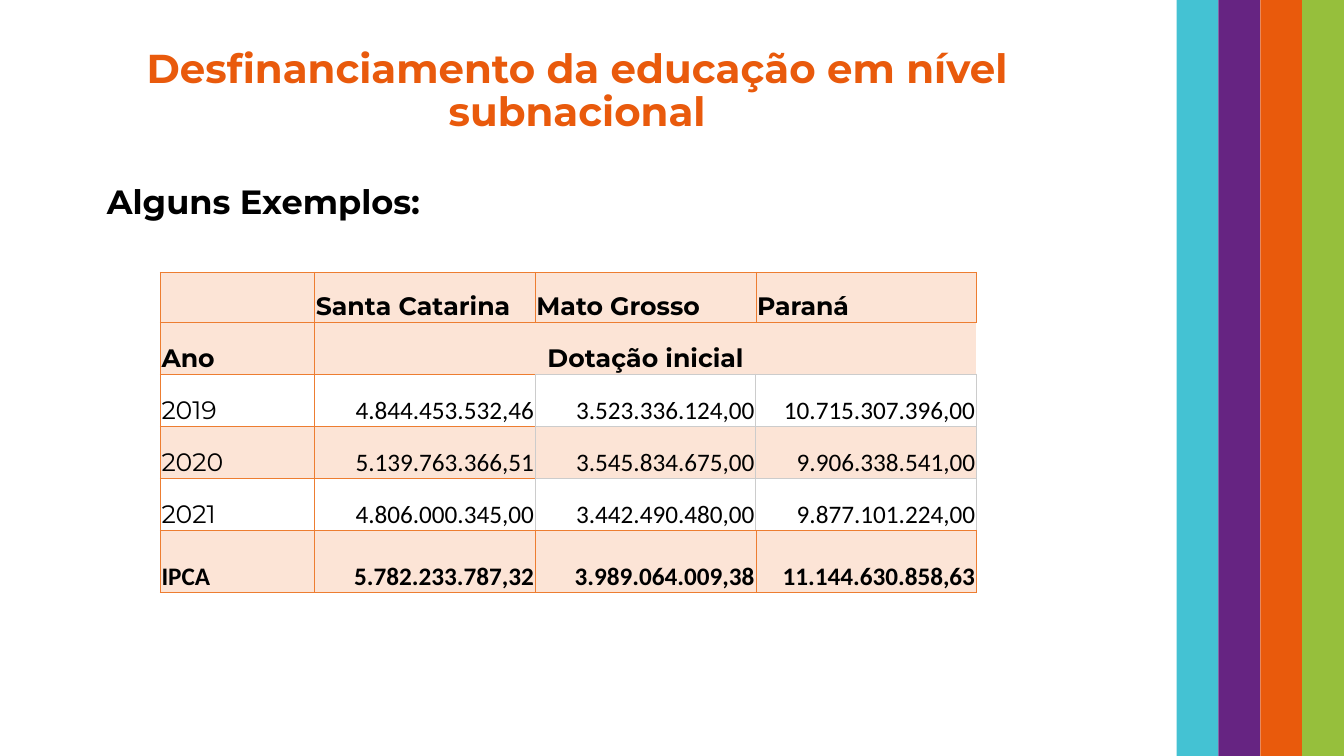
"""Build the slide on state education budgets, with a table of initial allocations."""
from dataclasses import dataclass

from lxml import etree
from pptx import Presentation
from pptx.dml.color import RGBColor
from pptx.enum.shapes import MSO_SHAPE
from pptx.enum.text import MSO_ANCHOR, MSO_AUTO_SIZE, PP_ALIGN
from pptx.oxml.ns import qn
from pptx.util import Cm, Pt

RECT = MSO_SHAPE.RECTANGLE
TOP, BOTTOM = MSO_ANCHOR.TOP, MSO_ANCHOR.BOTTOM
LEFT, CENTER, RIGHT = PP_ALIGN.LEFT, PP_ALIGN.CENTER, PP_ALIGN.RIGHT
FIXED = MSO_AUTO_SIZE.NONE

TITLE = "Desfinanciamento da educação em nível subnacional"
LEAD = "Alguns Exemplos:"
ROWS = [
    ("", "Santa Catarina", "Mato Grosso", "Paraná"),
    ("Ano", "Dotação inicial", "", ""),
    ("2019", "4.844.453.532,46", "3.523.336.124,00", "10.715.307.396,00"),
    ("2020", "5.139.763.366,51", "3.545.834.675,00", "9.906.338.541,00"),
    ("2021", "4.806.000.345,00", "3.442.490.480,00", "9.877.101.224,00"),
    ("IPCA", "5.782.233.787,32", "3.989.064.009,38", "11.144.630.858,63"),
]
TINTED = (0, 1, 3, 5)
YEARS = (2, 3, 4)
WIDTHS = (3.89, 5.56, 5.56, 5.56)
HEIGHTS = (1.26, 1.31, 1.31, 1.31, 1.31, 1.57)
SLIDE_W, SLIDE_H = 33.87, 19.05
STRIPE_X = 29.65


@dataclass
class Theme:
    """Colours, fonts and type sizes of the slide."""
    head: str = "E95A0C"
    ink: str = "000000"
    tint: str = "FCE4D6"
    warm: tuple = ("ED7D31", 0.5)
    grey: tuple = ("CCCCCC", 1)
    stripes: tuple = ("44C2D3", "662482", "E95A0C", "96BF3C")
    main: str = "Montserrat"
    digits: str = "Calibri"
    title: float = 28.8
    lead: float = 24
    cell: float = 18


THEME = Theme()


def style(par, size, color, font, bold, align):
    """Format a paragraph and its runs."""
    par.alignment = align
    for run in par.runs:
        run.font.size = Pt(size)
        run.font.name = font
        run.font.bold = bold
        run.font.color.rgb = RGBColor.from_string(color)


def place(shape, left, top, width, height):
    """Move and size a shape in centimetres."""
    shape.left, shape.top = Cm(left), Cm(top)
    shape.width, shape.height = Cm(width), Cm(height)


def fill_holder(shape, text, box, anchor, spacing):
    """Put text in a placeholder and return its paragraph."""
    place(shape, *box)
    frame = shape.text_frame
    frame.text = text
    frame.word_wrap = True
    frame.auto_size = FIXED
    frame.vertical_anchor = anchor
    par = frame.paragraphs[0]
    par.line_spacing = spacing
    return par


def add_stripes(slide):
    """Draw the coloured bands at the right edge."""
    width = (SLIDE_W - STRIPE_X) / len(THEME.stripes)
    for i, color in enumerate(THEME.stripes):
        band = slide.shapes.add_shape(
            RECT, Cm(STRIPE_X + i * width), 0, Cm(width), Cm(SLIDE_H))
        band.shadow.inherit = False
        band.fill.solid()
        band.fill.fore_color.rgb = RGBColor.from_string(color)
        band.line.fill.background()


def edges(r, c):
    """Return the left, right, top and bottom borders of a cell."""
    warm, grey = THEME.warm, THEME.grey
    if r == 1 and c:
        return warm if c == 1 else None, None, warm, warm if c == 1 else grey
    if r in YEARS and c > 1:
        return grey, grey, grey, warm if r == YEARS[-1] else grey
    return warm, grey if r in YEARS and c == 1 else warm, warm, warm


def set_edges(cell, lines):
    """Write the four borders of a cell."""
    props = cell._tc.get_or_add_tcPr()
    for side, line in zip(("lnL", "lnR", "lnT", "lnB"), lines):
        edge = etree.SubElement(props, qn("a:" + side))
        if line is None:
            etree.SubElement(edge, qn("a:noFill"))
            continue
        color, width = line
        edge.set("w", str(Pt(width)))
        fill = etree.SubElement(edge, qn("a:solidFill"))
        etree.SubElement(fill, qn("a:srgbClr")).set("val", color)


def add_budget(slide):
    """Draw the budget table."""
    table = slide.shapes.add_table(
        len(ROWS), len(WIDTHS), Cm(4.04), Cm(6.86),
        Cm(sum(WIDTHS)), Cm(sum(HEIGHTS))).table
    table.first_row = table.horz_banding = False
    for col, width in zip(table.columns, WIDTHS):
        col.width = Cm(width)
    for row, height in zip(table.rows, HEIGHTS):
        row.height = Cm(height)
    table.cell(1, 1).merge(table.cell(1, 3))
    for r, row in enumerate(ROWS):
        for c, text in enumerate(row):
            cell = table.cell(r, c)
            set_edges(cell, edges(r, c))
            if r in TINTED:
                cell.fill.solid()
                cell.fill.fore_color.rgb = RGBColor.from_string(THEME.tint)
            else:
                cell.fill.background()
            cell.margin_left = cell.margin_right = cell.margin_top = Cm(0.03)
            cell.margin_bottom = 0
            cell.vertical_anchor = BOTTOM
            cell.text_frame.text = text
            number = r > 1 and c > 0
            align = RIGHT if number else CENTER if r == 1 and c else LEFT
            font = THEME.digits if number or r == 5 else THEME.main
            style(cell.text_frame.paragraphs[0], THEME.cell, THEME.ink,
                  font, r not in YEARS, align)


def main():
    """Build and save the slide."""
    deck = Presentation()
    deck.slide_width, deck.slide_height = Cm(SLIDE_W), Cm(SLIDE_H)
    slide = deck.slides.add_slide(deck.slide_layouts[1])
    title = fill_holder(slide.shapes.title, TITLE,
                        (2.34, 1.09, 24.41, 3.68), TOP, 0.9)
    style(title, THEME.title, THEME.head, THEME.main, True, CENTER)
    lead = fill_holder(slide.placeholders[1], LEAD,
                       (2.44, 4.55, 16.89, 1.14), BOTTOM, 0.8)
    lead.space_before = Pt(10)
    style(lead, THEME.lead, THEME.ink, THEME.main, True, LEFT)
    props = lead._p.get_or_add_pPr()
    props.set("marL", "0")
    props.set("indent", "0")
    etree.SubElement(props, qn("a:buNone"))
    add_stripes(slide)
    add_budget(slide)
    deck.save("out.pptx")


if __name__ == "__main__":
    main()
